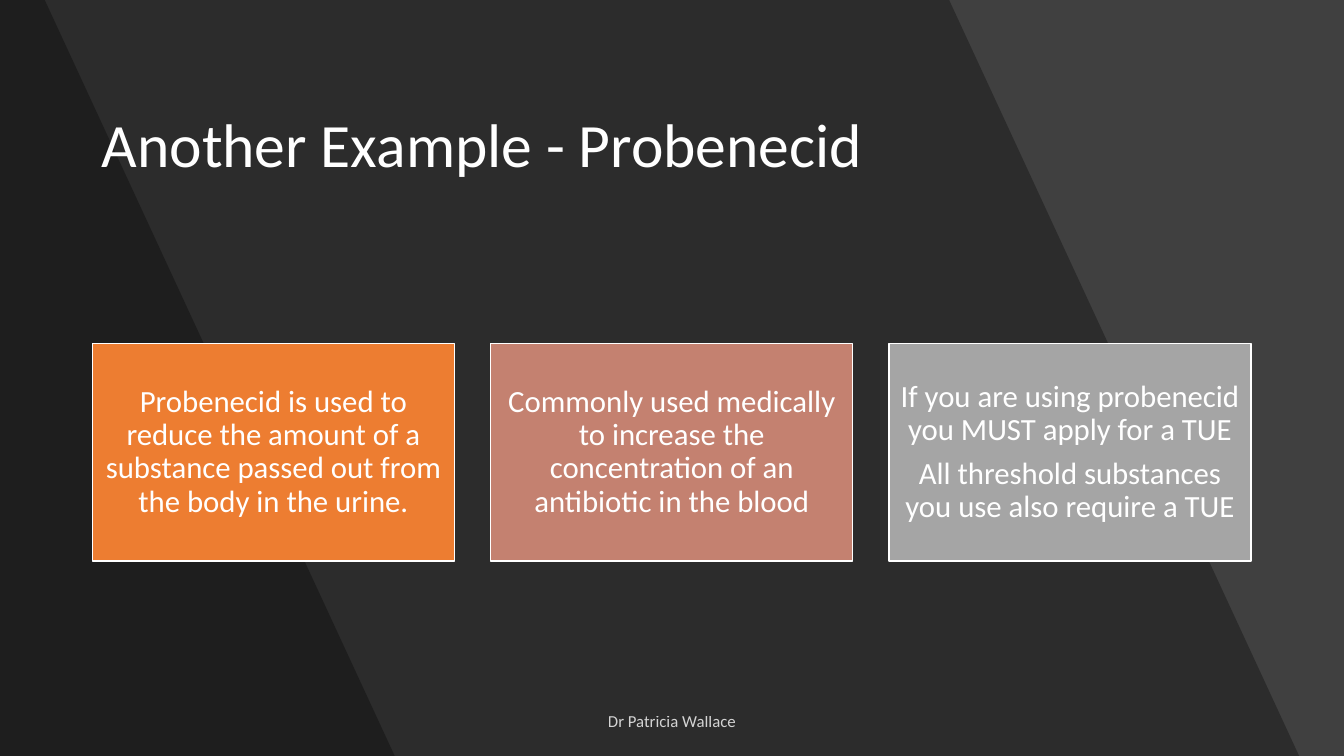
from pptx import Presentation
from pptx.dml.color import RGBColor
from pptx.enum.shapes import MSO_SHAPE as Shape
from pptx.enum.text import MSO_ANCHOR as Anchor, PP_ALIGN as Align
from pptx.oxml.ns import qn
from pptx.util import Pt
from lxml import etree

WIDTH, HEIGHT = 960, 540


def paint(fill, color, opacity=100):
    fill.solid()
    fill.fore_color.rgb = RGBColor.from_string(color)
    if opacity < 100:
        for node in fill._xPr.iter(qn("a:srgbClr")):
            etree.SubElement(node, qn("a:alpha")).set("val", str(opacity * 1000))


def write(para, text, size, opacity=100):
    span = para.add_run()
    span.text = text
    span.font.name = "Calibri"
    span.font.size = Pt(size)
    paint(span.font.fill, "FFFFFF", opacity)


deck = Presentation()
deck.slide_width, deck.slide_height = Pt(WIDTH), Pt(HEIGHT)
page = deck.slides.add_slide(deck.slide_layouts[6])

# Background with two slanted, translucent bands
paint(page.background.fill, "404040")
for top_right, bottom_right in [(678.5, 928), (32, 282)]:
    outline = page.shapes.build_freeform(0, 0, scale=Pt(1))
    outline.add_line_segments(
        [(top_right, 0), (bottom_right, HEIGHT), (0, HEIGHT)], close=True)
    band = outline.convert_to_shape()
    band.shadow.inherit = False
    band.line.fill.background()
    paint(band.fill, "000000", 30)

# Title
title = page.shapes.add_textbox(Pt(65.5), Pt(29), Pt(829), Pt(104)).text_frame
title.word_wrap = True
title.vertical_anchor = Anchor.BOTTOM
title.paragraphs[0].line_spacing = 0.9
write(title.paragraphs[0], "Another Example - Probenecid", 44)

# Footer
footer = page.shapes.add_textbox(Pt(318), Pt(500.5), Pt(324), Pt(29)).text_frame
footer.word_wrap = True
footer.vertical_anchor = Anchor.MIDDLE
footer.paragraphs[0].alignment = Align.CENTER
footer.paragraphs[0].space_after = Pt(6)
write(footer.paragraphs[0], "Dr Patricia Wallace", 12, 80)

# Three cards in a row
cards = [
    ("ED7D31", ["Probenecid is used to reduce the amount of a substance "
                "passed out from the body in the urine."]),
    ("C48170", ["Commonly used medically to increase the concentration "
                "of an antibiotic in the blood"]),
    ("A5A5A5", ["If you are using probenecid you MUST apply for a TUE",
                "All threshold substances you use also require a TUE"]),
]
for column, (color, texts) in enumerate(cards):
    card = page.shapes.add_shape(
        Shape.RECTANGLE, Pt(66 + column * 284.5), Pt(245.5), Pt(258.7), Pt(155.2))
    card.shadow.inherit = False
    paint(card.fill, color)
    paint(card.line.fill, "FFFFFF")
    card.line.width = Pt(1)
    frame = card.text_frame
    frame.word_wrap = True
    frame.vertical_anchor = Anchor.MIDDLE
    frame.margin_left = frame.margin_right = Pt(6.6)
    frame.margin_top = frame.margin_bottom = Pt(6.6)
    for index, text in enumerate(texts):
        para = frame.add_paragraph() if index else frame.paragraphs[0]
        para.alignment = Align.CENTER
        para.line_spacing = 0.9
        para.space_after = Pt(7.7)
        write(para, text, 22)

deck.save("out.pptx")
